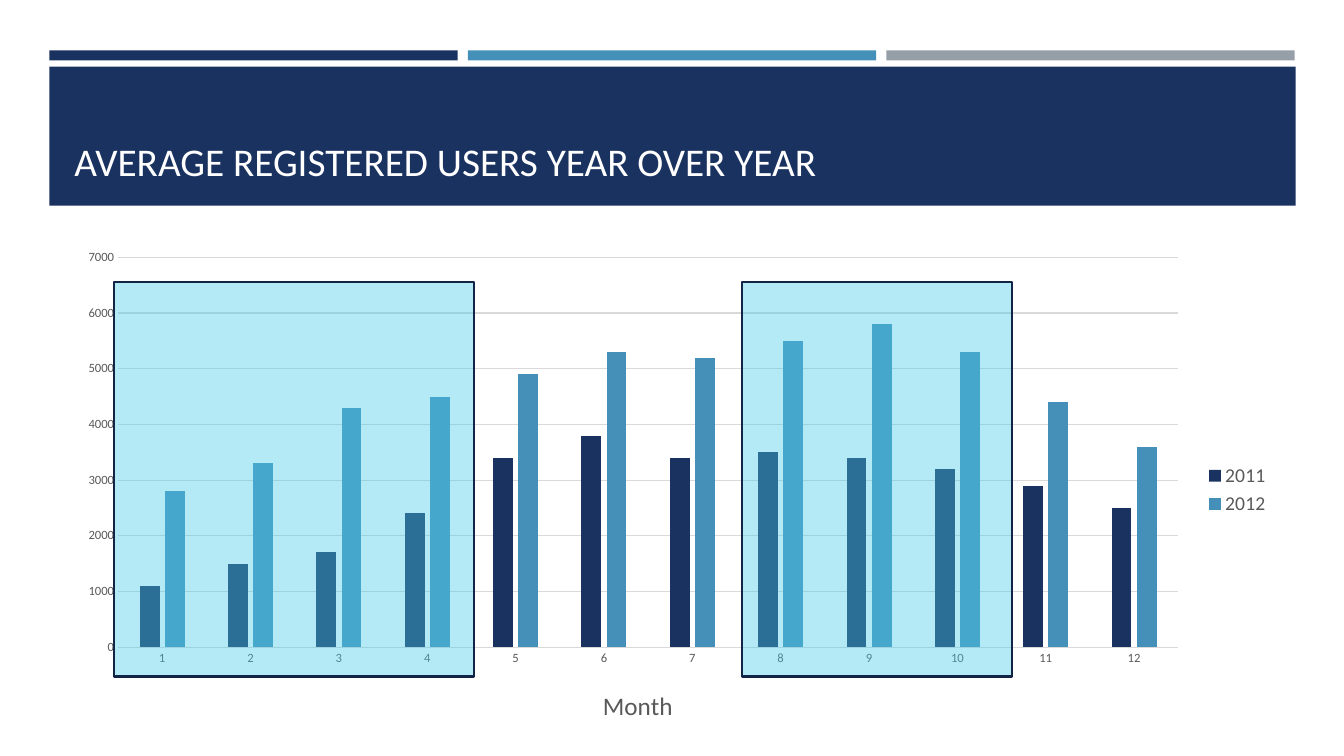
from dataclasses import dataclass

from lxml import etree
from pptx import Presentation
from pptx.chart.data import CategoryChartData
from pptx.dml.color import RGBColor
from pptx.enum.chart import XL_CHART_TYPE, XL_LEGEND_POSITION, XL_TICK_MARK
from pptx.enum.shapes import MSO_SHAPE
from pptx.enum.text import MSO_ANCHOR
from pptx.oxml.ns import qn
from pptx.util import Inches, Pt

RECTANGLE = MSO_SHAPE.RECTANGLE
CLUSTERED = XL_CHART_TYPE.COLUMN_CLUSTERED
LEGEND_RIGHT = XL_LEGEND_POSITION.RIGHT
NO_TICKS = XL_TICK_MARK.NONE
BOTTOM = MSO_ANCHOR.BOTTOM


@dataclass(frozen=True)
class Theme:
    navy: RGBColor = RGBColor.from_string("1A3260")
    blue: RGBColor = RGBColor.from_string("4590B8")
    gray: RGBColor = RGBColor.from_string("969FA7")
    white: RGBColor = RGBColor.from_string("FFFFFF")
    black: RGBColor = RGBColor.from_string("000000")
    text: RGBColor = RGBColor.from_string("595959")
    grid: RGBColor = RGBColor.from_string("D9D9D9")
    highlight: RGBColor = RGBColor.from_string("45CBE8")
    outline: RGBColor = RGBColor.from_string("132547")
    font: str = "Calibri"
    title_size: Pt = Pt(28)
    axis_title_size: Pt = Pt(18)
    legend_size: Pt = Pt(14)
    chart_size: Pt = Pt(10)
    tick_size: Pt = Pt(9)


theme = Theme()


def add_rectangle(left, top, width, height, color):
    shape = slide.shapes.add_shape(
        RECTANGLE, Inches(left), Inches(top), Inches(width), Inches(height)
    )
    shape.shadow.inherit = False
    shape.fill.solid()
    shape.fill.fore_color.rgb = color
    shape.line.fill.background()
    return shape


def set_layout(element, settings):
    layout = element.find(qn("c:layout"))
    if layout is None:
        layout = etree.Element(qn("c:layout"))
        element.insert(0, layout)
    manual = etree.SubElement(layout, qn("c:manualLayout"))
    for name, value in settings.items():
        etree.SubElement(manual, qn(f"c:{name}")).set("val", str(value))


presentation = Presentation()
presentation.slide_width = Inches(13.33)
presentation.slide_height = Inches(7.5)
slide = presentation.slides.add_slide(presentation.slide_layouts[6])

for index, color in enumerate((theme.navy, theme.blue, theme.gray)):
    add_rectangle(0.49 + index * 4.15, 0.5, 4.05, 0.1, color)
add_rectangle(0.49, 0.66, 12.36, 1.38, theme.navy)

title_box = slide.shapes.add_textbox(Inches(0.64), Inches(0.8), Inches(12.06), Inches(1.08))
title_box.text_frame.word_wrap = True
title_box.text_frame.vertical_anchor = BOTTOM
title_run = title_box.text_frame.paragraphs[0].add_run()
title_run.text = "AVERAGE REGISTERED USERS YEAR OVER YEAR"
title_run.font.name = theme.font
title_run.font.size = theme.title_size
title_run.font.color.rgb = theme.white

chart_data = CategoryChartData()
chart_data.categories = [str(month) for month in range(1, 13)]
chart_data.add_series(
    "2011", (1100, 1500, 1700, 2400, 3400, 3800, 3400, 3500, 3400, 3200, 2900, 2500)
)
chart_data.add_series(
    "2012", (2800, 3300, 4300, 4500, 4900, 5300, 5200, 5500, 5800, 5300, 4400, 3600)
)
chart = slide.shapes.add_chart(
    CLUSTERED, Inches(0.64), Inches(2.39), Inches(12.06), Inches(4.94), chart_data
).chart
chart.has_title = False
chart.font.name = theme.font
chart.font.size = theme.chart_size
chart.font.color.rgb = theme.black

plot = chart.plots[0]
plot.vary_by_categories = False
plot.gap_width = 219
plot.overlap = -27
for series, color in zip(plot.series, (theme.navy, theme.blue)):
    series.format.fill.solid()
    series.format.fill.fore_color.rgb = color

month_axis = chart.category_axis
users_axis = chart.value_axis
for axis in (month_axis, users_axis):
    axis.major_tick_mark = NO_TICKS
    axis.minor_tick_mark = NO_TICKS
    axis.tick_labels.font.name = theme.font
    axis.tick_labels.font.size = theme.tick_size
    axis.tick_labels.font.color.rgb = theme.text

users_axis.minimum_scale = 0
users_axis.maximum_scale = 7000
users_axis.major_unit = 1000
users_axis.format.line.fill.background()
for line in (month_axis.format.line, users_axis.major_gridlines.format.line):
    line.color.rgb = theme.grid
    line.width = Pt(0.75)

axis_title_run = month_axis.axis_title.text_frame.paragraphs[0].add_run()
axis_title_run.text = "Month"
axis_title_run.font.name = theme.font
axis_title_run.font.size = theme.axis_title_size
axis_title_run.font.bold = False
axis_title_run.font.color.rgb = theme.text

chart.has_legend = True
chart.legend.position = LEGEND_RIGHT
chart.legend.include_in_layout = False
chart.legend.font.name = theme.font
chart.legend.font.size = theme.legend_size
chart.legend.font.color.rgb = theme.text

plot_area = chart.element.find(".//" + qn("c:plotArea"))
set_layout(
    plot_area,
    {"layoutTarget": "inner", "xMode": "edge", "yMode": "edge",
     "x": 0.044, "y": 0.033, "w": 0.872, "h": 0.783},
)
set_layout(
    month_axis.axis_title.element if hasattr(month_axis.axis_title, "element")
    else plot_area.find(".//" + qn("c:title")),
    {"xMode": "edge", "yMode": "edge", "x": 0.439, "y": 0.89},
)

for left, width in ((7.36, 2.68), (1.13, 3.57)):
    highlight = add_rectangle(left, 2.8, width, 3.91, theme.highlight)
    highlight.line.color.rgb = theme.outline
    highlight.line.width = Pt(1.75)
    fill_color = highlight.element.spPr.find(qn("a:solidFill")).find(qn("a:srgbClr"))
    etree.SubElement(fill_color, qn("a:alpha")).set("val", "40000")

presentation.save("out.pptx")
